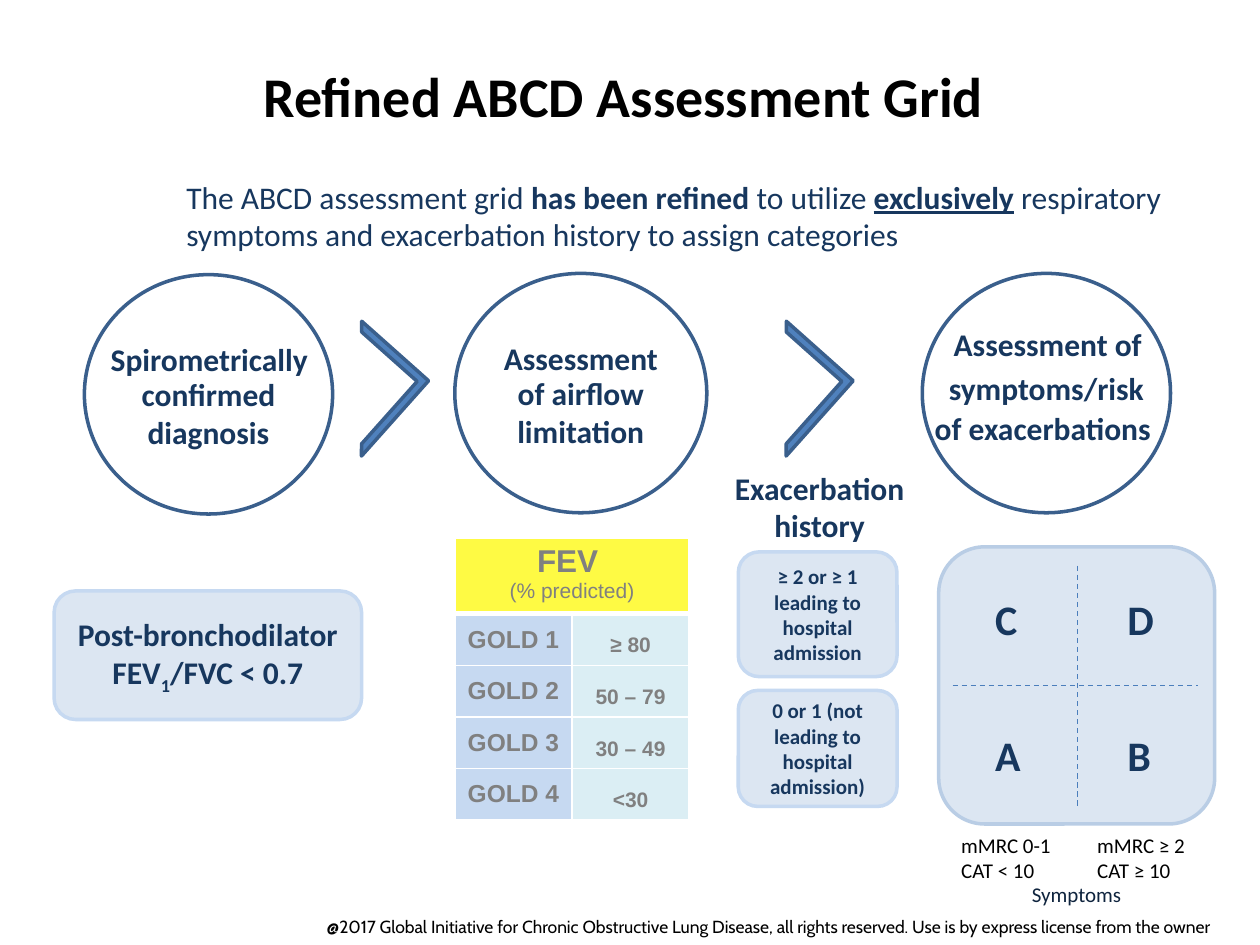
from lxml import etree
from pptx import Presentation
from pptx.dml.color import RGBColor
from pptx.enum import dml, shapes, text
from pptx.oxml.ns import qn
from pptx.util import Inches, Pt

NAVY, EDGE, PALE, SOFT = "17375E", "3A5F8C", "DCE6F2", "C6D9F1"
GREY, WHITE, BLACK = "808080", "FFFFFF", "000000"
MID = text.MSO_ANCHOR.MIDDLE
ALIGN = {"l": text.PP_ALIGN.LEFT, "c": text.PP_ALIGN.CENTER,
         "r": text.PP_ALIGN.RIGHT}


def rgb(code):
    return RGBColor.from_string(code)


def box(at):
    return [Inches(n) for n in at]


def write(frame, *paras, size=18, color=NAVY, bold=True, face="Calibri",
          align="c", space=None):
    """Each paragraph is a string or a list of (words, changes) pairs."""
    for i, para in enumerate(paras):
        p = frame.paragraphs[0] if i == 0 else frame.add_paragraph()
        p.alignment = ALIGN[align]
        if space:
            p.line_spacing = space
        for words, mods in [(para, {})] if isinstance(para, str) else para:
            run = p.add_run()
            run.text = words
            font = run.font
            font.name = face
            font.size = Pt(mods.get("size", size))
            font.bold = mods.get("bold", bold)
            font.color.rgb = rgb(color)
            if mods.get("under"):
                font.underline = True
            if "base" in mods:
                run._r.get_or_add_rPr().set("baseline", str(mods["base"]))


def label(slide, at, *paras, wrap=False, align="l", **form):
    frame = slide.shapes.add_textbox(*box(at)).text_frame
    frame.word_wrap = wrap
    frame.auto_size = text.MSO_AUTO_SIZE.SHAPE_TO_FIT_TEXT
    write(frame, *paras, align=align, **form)


def shape(slide, kind, at, fill, line, *paras, inset=0.05, **form):
    item = slide.shapes.add_shape(kind, *box(at))
    item.shadow.inherit = False
    item.fill.solid()
    item.fill.fore_color.rgb = rgb(fill)
    item.line.color.rgb = rgb(line)
    item.line.width = Pt(2)
    frame = item.text_frame
    frame.word_wrap = True
    frame.vertical_anchor = MID
    frame.margin_top = Inches(inset)
    write(frame, *paras, **form)
    return item


def circle(slide, at, *paras):
    # The top inset leaves room for the first line, a label of its own
    shape(slide, shapes.MSO_SHAPE.OVAL, at, WHITE, EDGE, *paras, inset=0.35)


def panel(slide, at, *paras, line=SOFT, **form):
    shape(slide, shapes.MSO_SHAPE.ROUNDED_RECTANGLE, at, PALE, line,
          *paras, **form)


def arrow(slide, left):
    item = shape(slide, shapes.MSO_SHAPE.HALF_FRAME,
                 (left, 2.73, 0.8, 0.71), "4F81BD", EDGE)
    item.adjustments[0] = item.adjustments[1] = 0.09
    item.rotation = 131.7


def dash(slide, x1, y1, x2, y2):
    line = slide.shapes.add_connector(shapes.MSO_CONNECTOR.STRAIGHT,
                                      *box((x1, y1, x2, y2)))
    line.line.color.rgb = rgb("4B7EBC")
    line.line.width = Pt(0.75)
    line.line.dash_style = dml.MSO_LINE.DASH
    etree.SubElement(line._element.spPr, qn("a:effectLst"))


def paint(cell, fill, top=1, bottom=1):
    props = cell._tc.get_or_add_tcPr()
    for side, width in zip("LRTB", (1, 1, top, bottom)):
        edge = etree.SubElement(props, qn(f"a:ln{side}"), w=str(Pt(width)))
        solid = etree.SubElement(edge, qn("a:solidFill"))
        etree.SubElement(solid, qn("a:srgbClr"), val=WHITE)
    cell.fill.solid()
    cell.fill.fore_color.rgb = rgb(fill)


def grades(slide):
    limits = ["≥ 80", "50 – 79", "30 – 49", "<30"]
    table = slide.shapes.add_table(5, 2, *box((3.61, 4.27, 1.86, 2.22))).table
    for col in table.columns:
        col.width = Inches(0.93)
    for i, row in enumerate(table.rows):
        row.height = Inches(0.41 if i else 0.58)

    # Heading across both columns
    head = table.cell(0, 0)
    head.merge(table.cell(0, 1))
    for col in range(2):
        paint(table.cell(0, col), "FEFA44", bottom=3)
    write(head.text_frame, "FEV ",
          [("(% predicted)", {"size": 12, "bold": False})],
          color=GREY, face="Arial")

    # One row for each grade
    for i, limit in enumerate(limits, 1):
        looks = [(f"GOLD {i}", SOFT, 14, None), (limit, "DBEEF4", 12, 1.5)]
        for col, (words, fill, size, space) in enumerate(looks):
            cell = table.cell(i, col)
            paint(cell, fill, top=3 if i == 1 else 1)
            cell.vertical_anchor = MID
            write(cell.text_frame, words, size=size, color=GREY,
                  face="Arial", space=space)


def matrix(slide):
    panel(slide, (7.45, 4.34, 2.19, 2.2), line="B9CDE5")
    dash(slide, 8.55, 4.49, 8.55, 6.4)
    dash(slide, 7.56, 5.44, 9.51, 5.44)
    for i, letter in enumerate("CDAB"):
        label(slide, (7.8 + i % 2 * 1.05, 4.66 + i // 2 * 1.08, 0.4, 0.51),
              letter, size=24)
    small = {"size": 12, "bold": False}
    for left, score, cat in [(7.53, "0-1", "< 10"), (8.61, "≥ 2", "≥ 10")]:
        label(slide, (left, 6.56, 0.92, 0.51), f"mMRC {score}", f"CAT {cat}",
              color=BLACK, **small)
    label(slide, (8.09, 6.95, 0.92, 0.3), "Symptoms", color="0F243E", **small)


def main():
    deck = Presentation()
    deck.slide_width, deck.slide_height = Inches(10), Inches(7.5)
    slide = deck.slides.add_slide(deck.slide_layouts[5])

    # Title and lead
    title = slide.shapes.title
    title.left, title.top, title.width, title.height = box((0.5, 0.13, 9, 1.25))
    title.text_frame.vertical_anchor = MID
    write(title.text_frame, "Refined ABCD Assessment Grid ", size=32,
          color=BLACK)
    label(slide, (1.38, 1.36, 7.95, 1.01), [
        ("The ABCD assessment grid ", {}),
        ("has been refined ", {"bold": True}),
        ("to utilize ", {}),
        ("exclusively", {"bold": True, "under": True}),
        (" respiratory symptoms and exacerbation history "
         "to assign categories", {})], wrap=True, bold=False)

    # Three steps
    circle(slide, (0.67, 2.18, 1.97, 1.9), "confirmed diagnosis")
    label(slide, (0.78, 2.65, 1.78, 0.4), "Spirometrically")
    circle(slide, (3.61, 2.17, 2, 1.9), "of airflow limitation")
    label(slide, (3.9, 2.64, 1.43, 0.4), "Assessment")
    circle(slide, (7.32, 2.17, 1.97, 1.9))
    label(slide, (7.47, 2.53, 1.71, 0.4), "Assessment of")
    label(slide, (7.32, 2.88, 1.97, 0.4), "symptoms/risk", wrap=True,
          align="c")
    label(slide, (7.32, 3.2, 1.93, 0.4), "of exacerbations")
    for left in (2.47, 5.84):
        arrow(slide, left)

    # Details under each step
    panel(slide, (0.43, 4.69, 2.44, 1.02), "Post-bronchodilator",
          [("FEV", {}), ("1", {"base": -25000}), ("/FVC < 0.7", {})])
    grades(slide)
    label(slide, (5.71, 3.67, 1.59, 0.71), "Exacerbation history", wrap=True,
          align="c")
    panel(slide, (5.86, 4.38, 1.26, 0.99),
          "≥ 2 or ≥ 1 leading to hospital admission", size=12)
    panel(slide, (5.86, 5.48, 1.26, 0.92),
          "0 or 1 (not leading to hospital admission)", size=12)
    matrix(slide)

    # Copyright line
    label(slide, (0.74, 7.22, 8.99, 0.27),
          "@2017 Global Initiative for Chronic Obstructive Lung Disease, all "
          "rights reserved. Use is by express license from the owner ",
          wrap=True, align="r", size=10, color=BLACK, bold=False, face="Cabin")
    deck.save("out.pptx")


if __name__ == "__main__":
    main()
